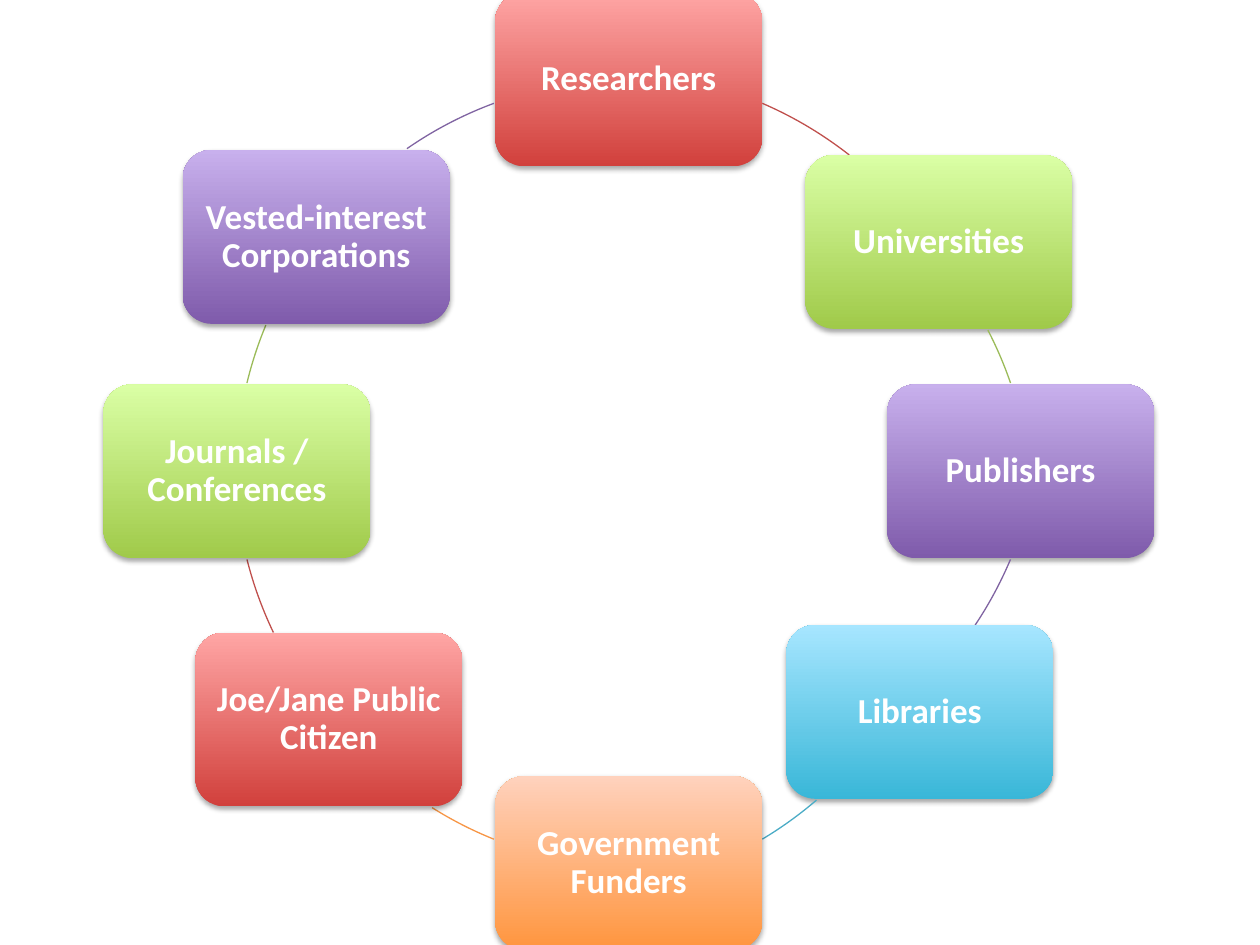
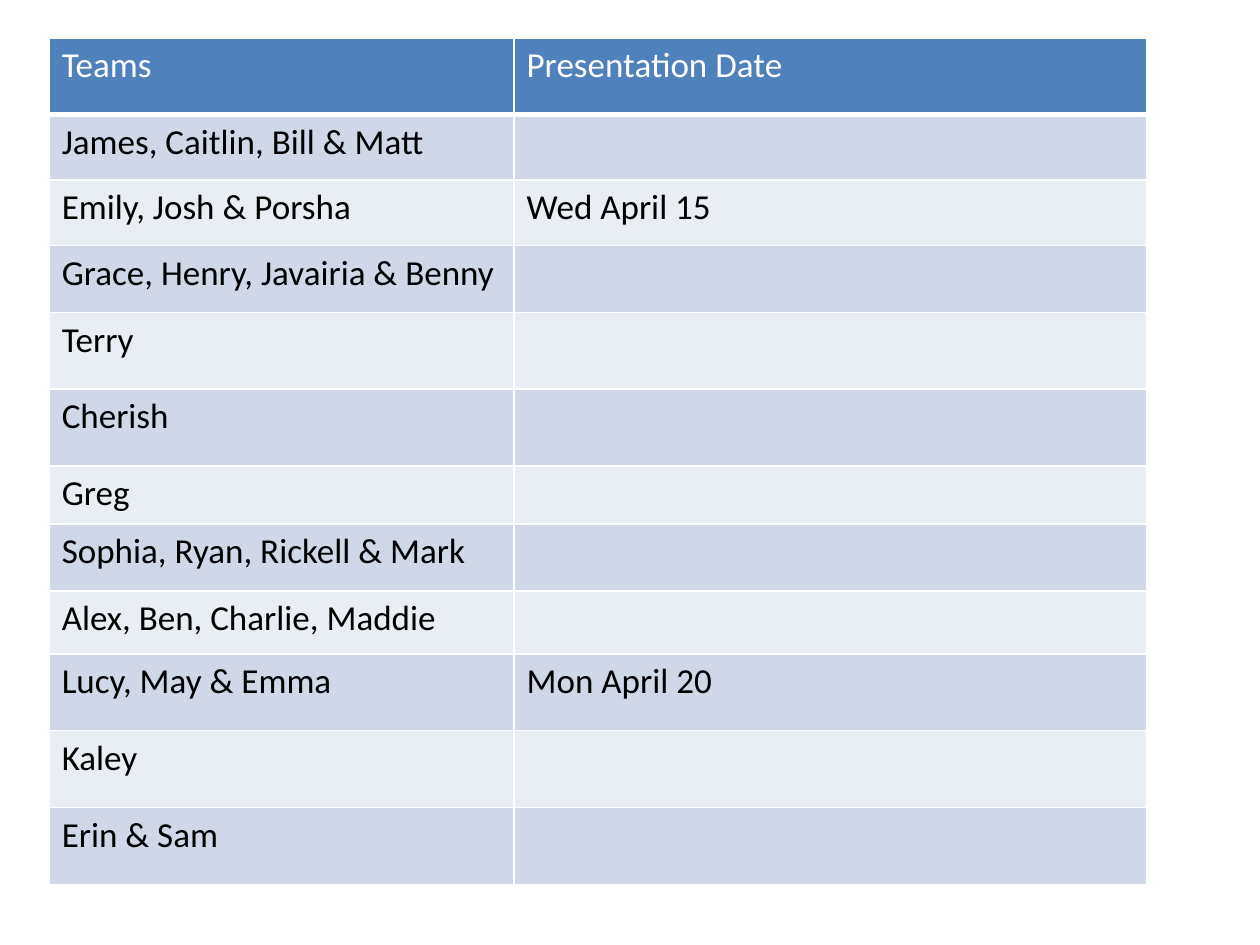
from dataclasses import dataclass
from math import atan2, degrees, hypot, sqrt

from lxml import etree
from pptx import Presentation
from pptx.dml.color import RGBColor
from pptx.enum.shapes import MSO_SHAPE
from pptx.enum.text import MSO_ANCHOR, PP_ALIGN
from pptx.oxml.ns import qn
from pptx.util import Emu, Inches, Pt

ROUNDED = MSO_SHAPE.ROUNDED_RECTANGLE
ARC = MSO_SHAPE.ARC
MIDDLE = MSO_ANCHOR.MIDDLE
CENTER = PP_ALIGN.CENTER

SLIDE_COLUMNS, SLIDE_ROWS = 100, 75
GRID_UNIT = Inches(0.1)
FONT_NAME = "Calibri"
FONT_SIZE = Pt(20)
WHITE, BLACK = "FFFFFF", "000000"

CARD_WIDTH, CARD_HEIGHT = 21.2, 13.8
CARD_INSET = 0.8
RING_RADIUS = 31.1

TABLE_LEFT, TABLE_TOP = 3.9, 3
TABLE_COLUMNS = (36.9, 50.2)
HEADER_FILL = "4F81BD"
BAND_FILLS = ("E9EDF4", "D0D8E8")


@dataclass(frozen=True)
class Tint:
    dark: str
    light: str
    line: str


@dataclass(frozen=True)
class Stakeholder:
    name: str
    left: float
    top: float
    tint: Tint
    arc_start: tuple[float, float]
    arc_end: tuple[float, float]


@dataclass(frozen=True)
class TeamRow:
    height: float
    team: str
    date: str = ""


RED = Tint("D1403C", "FFA6A5", "C0504D")
GREEN = Tint("A0CA4A", "DAFFA5", "9BBB59")
PURPLE = Tint("7F5BAB", "C8B0ED", "8064A2")
BLUE = Tint("39B7D8", "A7E6FF", "4BACC6")
ORANGE = Tint("FF953E", "FFD2BD", "F79646")

STAKEHOLDERS = (
    Stakeholder("Researchers", 39.3, -0.6, RED, (60.5, 8.2), (67.4, 12.3)),
    Stakeholder("Universities", 63.9, 12.3, GREEN, (78.4, 26.2), (80.2, 30.4)),
    Stakeholder("Publishers", 70.4, 30.5, PURPLE, (80.2, 44.4), (77.4, 49.6)),
    Stakeholder("Libraries", 62.4, 49.6, BLUE, (64.8, 63.5), (60.5, 66.6)),
    Stakeholder("Government Funders", 39.3, 61.6, ORANGE, (39.2, 66.6), (34.3, 64.1)),
    Stakeholder("Joe/Jane Public Citizen", 15.5, 50.2, RED, (21.7, 50.2), (19.6, 44.4)),
    Stakeholder("Journals / Conferences", 8.2, 30.5, GREEN, (19.6, 30.4), (21.1, 25.8)),
    Stakeholder("Vested-interest Corporations", 14.5, 11.9, PURPLE, (32.3, 11.8), (39.2, 8.2)),
)

TEAM_ROWS = (
    TeamRow(6.1, "Teams", "Presentation Date"),
    TeamRow(5.2, "James, Caitlin, Bill & Matt"),
    TeamRow(5.2, "Emily, Josh & Porsha", "Wed April 15"),
    TeamRow(5.3, "Grace, Henry, Javairia & Benny"),
    TeamRow(6.1, "Terry"),
    TeamRow(6.1, "Cherish"),
    TeamRow(4.6, "Greg"),
    TeamRow(5.3, "Sophia, Ryan, Rickell & Mark"),
    TeamRow(5.0, "Alex, Ben, Charlie, Maddie"),
    TeamRow(6.1, "Lucy, May & Emma", "Mon April 20"),
    TeamRow(6.1, "Kaley"),
    TeamRow(6.1, "Erin & Sam"),
)


def grid(units: float) -> Emu:
    return Emu(round(units * GRID_UNIT))


def paint(color_format, color: str) -> None:
    color_format.rgb = RGBColor.from_string(color)


def add_child(parent, tag: str, **attributes: str):
    return etree.SubElement(parent, qn(tag), attributes)


def add_run(paragraph, text: str, color: str, bold: bool = False) -> None:
    run = paragraph.add_run()
    run.text = text
    run.font.name = FONT_NAME
    run.font.size = FONT_SIZE
    run.font.bold = bold
    paint(run.font.color, color)


def add_shape(slide, kind, left: float, top: float, width: float, height: float):
    shape = slide.shapes.add_shape(kind, grid(left), grid(top), grid(width), grid(height))
    shape.shadow.inherit = False
    return shape


def add_soft_shadow(shape) -> None:
    effects = shape._element.spPr.find(qn("a:effectLst"))
    shadow = add_child(effects, "a:outerShdw", blurRad=str(Pt(3.1)), dist=str(Pt(1.8)),
                       dir="5400000", rotWithShape="0")
    add_child(add_child(shadow, "a:srgbClr", val=BLACK), "a:alpha", val="35000")


def draw_card(slide, stakeholder: Stakeholder) -> None:
    card = add_shape(slide, ROUNDED, stakeholder.left, stakeholder.top, CARD_WIDTH, CARD_HEIGHT)
    add_soft_shadow(card)
    card.line.fill.background()
    card.fill.gradient()
    card.fill.gradient_angle = 90
    for stop, color in zip(card.fill.gradient_stops, (stakeholder.tint.dark, stakeholder.tint.light)):
        paint(stop.color, color)

    frame = card.text_frame
    frame.word_wrap = True
    frame.vertical_anchor = MIDDLE
    frame.margin_left = frame.margin_right = grid(CARD_INSET)
    frame.margin_top = frame.margin_bottom = grid(CARD_INSET)
    paragraph = frame.paragraphs[0]
    paragraph.alignment = CENTER
    paragraph.line_spacing = 0.9
    add_run(paragraph, stakeholder.name, WHITE, bold=True)


def draw_arc(slide, stakeholder: Stakeholder) -> None:
    (start_x, start_y), (end_x, end_y) = stakeholder.arc_start, stakeholder.arc_end
    run_x, run_y = end_x - start_x, end_y - start_y
    chord = hypot(run_x, run_y)
    reach = sqrt(RING_RADIUS ** 2 - (chord / 2) ** 2) / chord
    center_x = (start_x + end_x) / 2 - run_y * reach
    center_y = (start_y + end_y) / 2 + run_x * reach

    arc = add_shape(slide, ARC, center_x - RING_RADIUS, center_y - RING_RADIUS,
                    2 * RING_RADIUS, 2 * RING_RADIUS)
    for index, (x, y) in enumerate((stakeholder.arc_start, stakeholder.arc_end)):
        angle = degrees(atan2(y - center_y, x - center_x)) % 360
        arc.adjustments[index] = angle * 60000 / 100000
    arc.fill.background()
    arc.line.width = Pt(0.75)
    paint(arc.line.color, stakeholder.tint.line)


def set_borders(cell, bottom_width: float) -> None:
    properties = cell._tc.get_or_add_tcPr()
    for side, width in (("L", 1), ("R", 1), ("T", 1), ("B", bottom_width)):
        border = add_child(properties, f"a:ln{side}", w=str(Pt(width)))
        add_child(add_child(border, "a:solidFill"), "a:srgbClr", val=WHITE)


def draw_team_table(slide) -> None:
    total_height = sum(row.height for row in TEAM_ROWS)
    table = slide.shapes.add_table(
        len(TEAM_ROWS), len(TABLE_COLUMNS), grid(TABLE_LEFT), grid(TABLE_TOP),
        grid(sum(TABLE_COLUMNS)), grid(total_height)).table
    for column, width in zip(table.columns, TABLE_COLUMNS):
        column.width = grid(width)
    for index, team_row in enumerate(TEAM_ROWS):
        is_header = index == 0
        table.rows[index].height = grid(team_row.height)
        for cell, text in zip(table.rows[index].cells, (team_row.team, team_row.date)):
            set_borders(cell, 3 if is_header else 1)
            cell.fill.solid()
            paint(cell.fill.fore_color, HEADER_FILL if is_header else BAND_FILLS[index % 2])
            if text:
                add_run(cell.text_frame.paragraphs[0], text, WHITE if is_header else BLACK)


def main() -> None:
    presentation = Presentation()
    presentation.slide_width = grid(SLIDE_COLUMNS)
    presentation.slide_height = grid(SLIDE_ROWS)
    blank_layout = presentation.slide_layouts[6]

    ring_slide = presentation.slides.add_slide(blank_layout)
    for stakeholder in STAKEHOLDERS:
        draw_card(ring_slide, stakeholder)
        draw_arc(ring_slide, stakeholder)

    draw_team_table(presentation.slides.add_slide(blank_layout))
    presentation.save("out.pptx")


if __name__ == "__main__":
    main()
